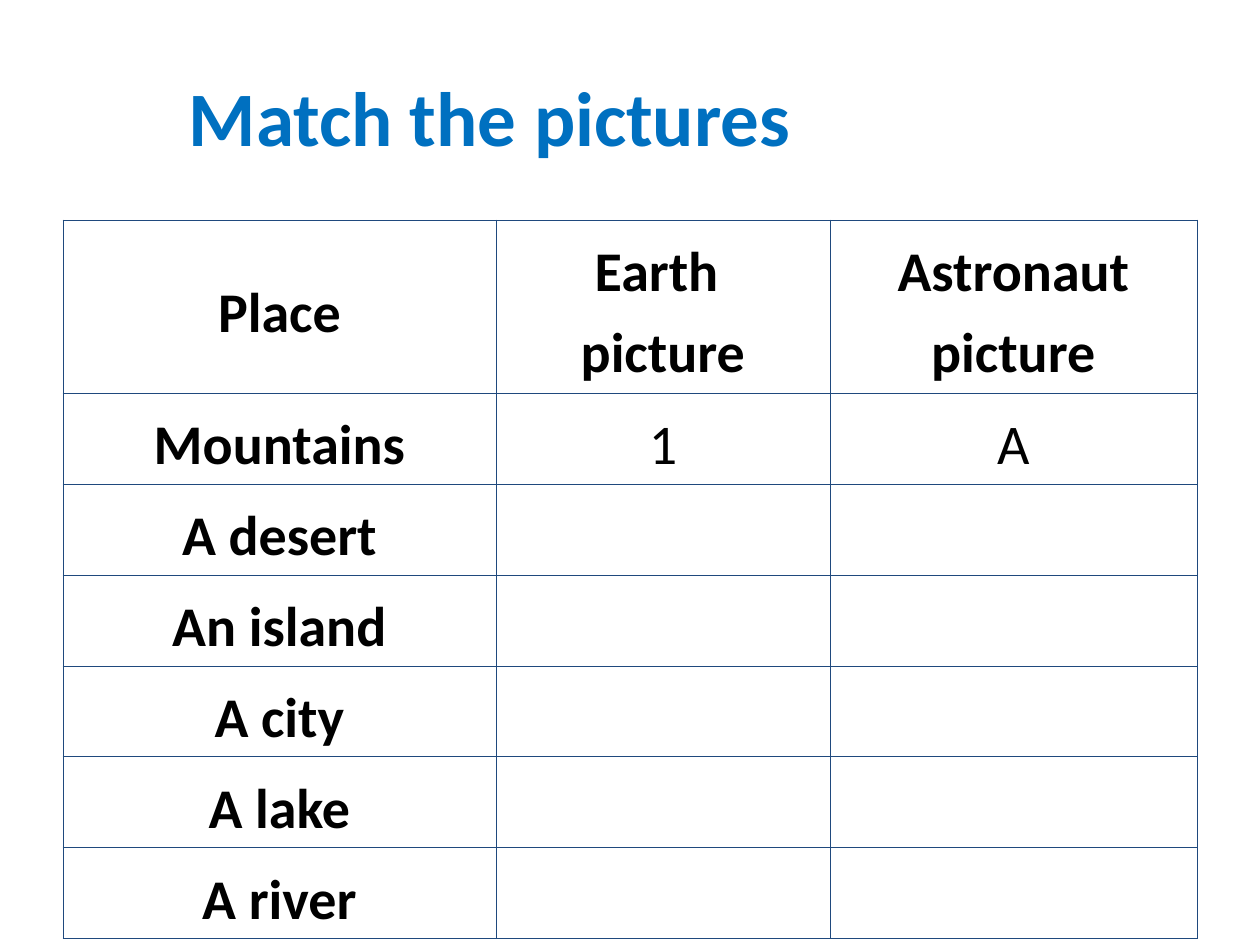
from dataclasses import dataclass

from lxml.etree import SubElement
from pptx import Presentation
from pptx.dml.color import RGBColor as Rgb
from pptx.enum.text import MSO_ANCHOR as Anchor, PP_ALIGN as Align
from pptx.oxml.ns import qn
from pptx.util import Pt

PX = 914400 // 126


@dataclass(frozen=True)
class Theme:
    font: str = "Calibri"
    title_color: str = "0070C0"
    text_color: str = "000000"
    border_color: str = "1F497D"
    title_size: int = 44
    cell_size: int = 32
    border_width: float = 0.5


THEME = Theme()
COLUMNS = (433, 334, 367)
HEADER_HEIGHT, ROW_HEIGHT = 173, 91
ROWS = (
    ("Place", "Earth \vpicture", "Astronaut picture"),
    ("Mountains", "1", "A"),
    ("A desert", "", ""),
    ("An island", "", ""),
    ("A city", "", ""),
    ("A lake", "", ""),
    ("A river", "", ""),
)


def style_spans(para, size, color, bold):
    para.alignment = Align.CENTER
    for span in para.runs:
        span.font.name = THEME.font
        span.font.size = Pt(size)
        span.font.bold = bold
        span.font.color.rgb = Rgb.from_string(color)


def add_borders(cell):
    properties = cell._tc.get_or_add_tcPr()
    for position, side in enumerate(("lnL", "lnR", "lnT", "lnB")):
        line = SubElement(properties, qn(f"a:{side}"), w=str(Pt(THEME.border_width)))
        fill = SubElement(line, qn("a:solidFill"))
        SubElement(fill, qn("a:srgbClr"), val=THEME.border_color)
        properties.insert(position, line)


def add_title(page, left, top, width, height):
    box = page.shapes.add_textbox(left * PX, top * PX, width * PX, height * PX)
    frame = box.text_frame
    frame.word_wrap = True
    frame.vertical_anchor = Anchor.MIDDLE
    frame.text = "Match the pictures"
    style_spans(frame.paragraphs[0], THEME.title_size, THEME.title_color, True)


def fill_cell(cell, text, bold):
    cell.fill.background()
    add_borders(cell)
    cell.vertical_anchor = Anchor.MIDDLE
    cell.margin_left = cell.margin_right = 11 * PX
    cell.margin_top = cell.margin_bottom = 5 * PX
    if text:
        cell.text_frame.text = text
        para = cell.text_frame.paragraphs[0]
        para.line_spacing = 1.19
        para.space_after = Pt(6)
        style_spans(para, THEME.cell_size, THEME.text_color, bold)


def add_matching_table(page, left, top):
    heights = [HEADER_HEIGHT] + [ROW_HEIGHT] * (len(ROWS) - 1)
    table = page.shapes.add_table(
        len(ROWS), len(COLUMNS), left * PX, top * PX, sum(COLUMNS) * PX, sum(heights) * PX
    ).table
    table.first_row = table.horz_banding = False
    for column, width in zip(table.columns, COLUMNS):
        column.width = width * PX
    for row, height in zip(table.rows, heights):
        row.height = height * PX
    for row_index, texts in enumerate(ROWS):
        for column_index, text in enumerate(texts):
            bold = row_index == 0 or column_index == 0
            fill_cell(table.cell(row_index, column_index), text, bold)


def main():
    deck = Presentation()
    deck.slide_width, deck.slide_height = 1260 * PX, 945 * PX
    page = deck.slides.add_slide(deck.slide_layouts[6])
    add_title(page, 63, 38, 854, 156)
    add_matching_table(page, 63, 220)
    deck.save("out.pptx")


if __name__ == "__main__":
    main()
